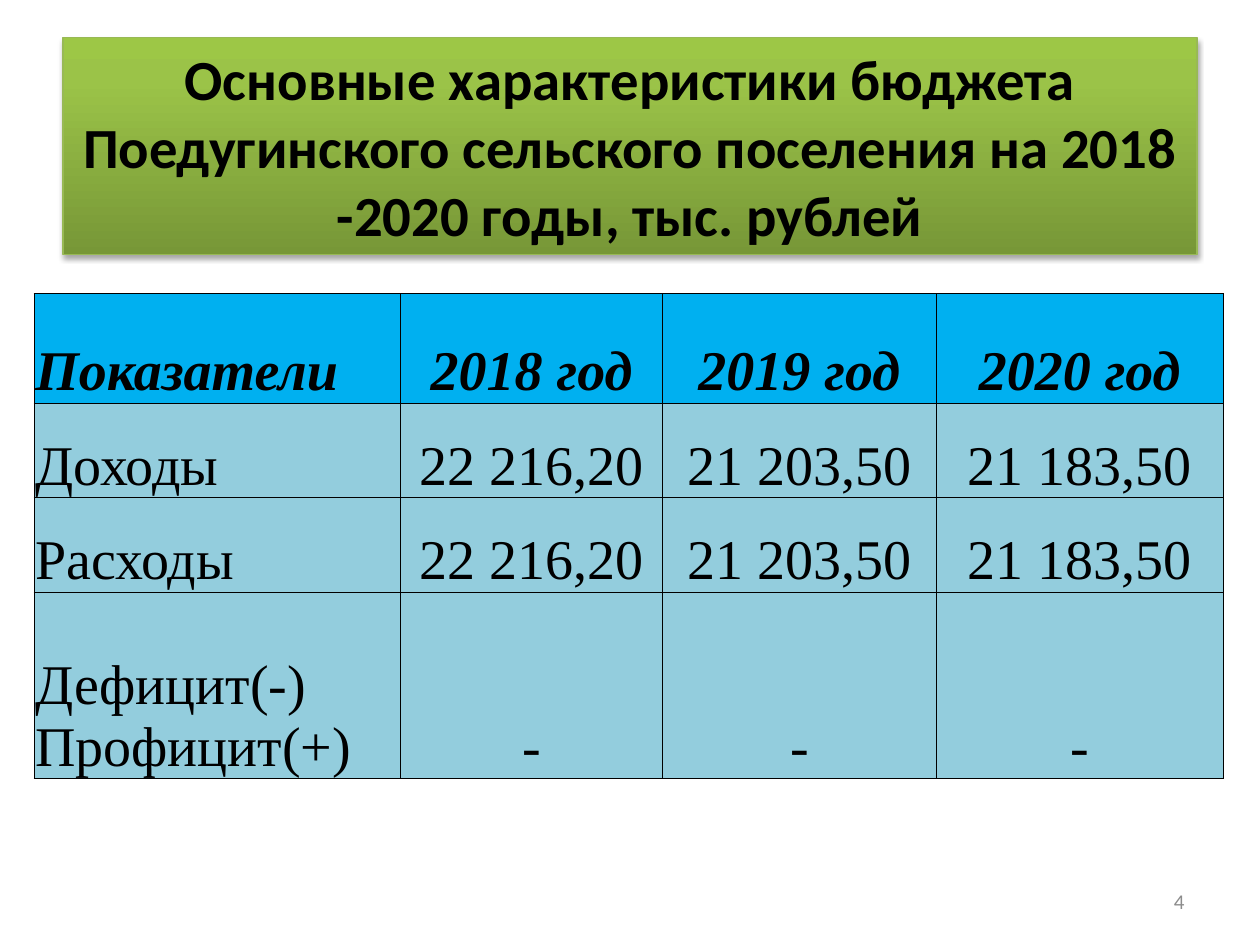
"""Build a slide with the main figures of a settlement budget for 2018-2020."""
from lxml import etree
from pptx import Presentation
from pptx.dml.color import RGBColor
from pptx.enum.text import MSO_ANCHOR, MSO_AUTO_SIZE, PP_ALIGN
from pptx.oxml import parse_xml
from pptx.oxml.ns import nsdecls, qn
from pptx.util import Inches, Pt

LEFT, CENTER, RIGHT = PP_ALIGN.LEFT, PP_ALIGN.CENTER, PP_ALIGN.RIGHT
MIDDLE, BOTTOM = MSO_ANCHOR.MIDDLE, MSO_ANCHOR.BOTTOM
NO_FIT = MSO_AUTO_SIZE.NONE
BLACK = RGBColor(0x00, 0x00, 0x00)
GRAY = RGBColor(0x8C, 0x8C, 0x8C)
HEADER_BLUE = RGBColor(0x00, 0xB0, 0xF0)
BODY_BLUE = RGBColor(0x93, 0xCD, 0xDD)
TITLE_LINE = RGBColor(0x98, 0xB9, 0x55)
TITLE_STOPS = [
    (0, RGBColor(0x77, 0x97, 0x37)),
    (80, RGBColor(0x9B, 0xC3, 0x48)),
    (100, RGBColor(0x9D, 0xC7, 0x46)),
]
MARGIN = 0.5
COLUMNS = [2.91, 2.08, 2.17, 2.28]
ROWS = [0.87, 0.75, 0.75, 1.48]
BUDGET = [
    ["Показатели", "2018 год", "2019 год", "2020 год"],
    ["Доходы", "22 216,20", "21 203,50", "21 183,50"],
    ["Расходы", "22 216,20", "21 203,50", "21 183,50"],
    ["Дефицит(-) Профицит(+)", "-", "-", "-"],
]


def write(frame, text, size, font="Calibri", color=BLACK, align=LEFT, bold=False, italic=False):
    para = frame.paragraphs[0]
    para.alignment = align
    span = para.add_run()
    span.text = text
    span.font.name = font
    span.font.size = Pt(size)
    span.font.color.rgb = color
    span.font.bold = bold
    span.font.italic = italic


deck = Presentation()
deck.slide_width, deck.slide_height = Inches(10), Inches(7.5)
page = deck.slides.add_slide(deck.slide_layouts[5])

title = page.shapes.title
title.left, title.top = Inches(MARGIN), Inches(0.3)
title.width, title.height = deck.slide_width - 2 * title.left, Inches(1.72)
title.fill.gradient()
title.fill.gradient_angle = 90
stop_list = title.element.spPr.find(".//" + qn("a:gsLst"))
for stop in list(stop_list):
    stop_list.remove(stop)
for position, color in TITLE_STOPS:
    stop = etree.SubElement(stop_list, qn("a:gs"), pos=str(position * 1000))
    etree.SubElement(stop, qn("a:srgbClr"), val=str(color))
title.line.color.rgb = TITLE_LINE
title.line.width = Pt(0.75)
title.shadow.inherit = False
title.element.spPr.find(qn("a:effectLst")).append(parse_xml(
    f'<a:outerShdw {nsdecls("a")} blurRad="{Pt(3.1)}" dist="{Pt(1.8)}" dir="5400000" rotWithShape="0">'
    '<a:srgbClr val="000000"><a:alpha val="35000"/></a:srgbClr></a:outerShdw>'
))
title.text_frame.auto_size = NO_FIT
title.text_frame.word_wrap = True
title.text_frame.vertical_anchor = MIDDLE
write(title.text_frame,
      "Основные характеристики бюджета Поедугинского сельского поселения на 2018 -2020 годы, тыс. рублей",
      32.4, align=CENTER, bold=True)

number = page.shapes.add_textbox(Inches(7.17), Inches(6.95), Inches(2.33), Inches(0.4))
number.text_frame.word_wrap = True
number.text_frame.vertical_anchor = MIDDLE
write(number.text_frame, "4", 12, color=GRAY, align=RIGHT)

table = page.shapes.add_table(
    len(ROWS), len(COLUMNS), Inches(0.27), Inches(2.33), Inches(sum(COLUMNS)), Inches(sum(ROWS))
).table
for column, width in zip(table.columns, COLUMNS):
    column.width = Inches(width)
for row, height in zip(table.rows, ROWS):
    row.height = Inches(height)
for row_index, values in enumerate(BUDGET):
    header = row_index == 0
    for column_index, value in enumerate(values):
        cell = table.cell(row_index, column_index)
        cell.margin_left = cell.margin_right = cell.margin_top = Inches(0.01)
        cell.margin_bottom = 0
        cell.vertical_anchor = BOTTOM
        for side in ("lnL", "lnR", "lnT", "lnB"):
            cell._tc.get_or_add_tcPr().append(parse_xml(
                f'<a:{side} {nsdecls("a")} w="{Pt(0.5)}"><a:solidFill>'
                f'<a:srgbClr val="{BLACK}"/></a:solidFill></a:{side}>'
            ))
        cell.fill.solid()
        cell.fill.fore_color.rgb = HEADER_BLUE if header else BODY_BLUE
        write(cell.text_frame, value, 32, font="Times New Roman",
              align=CENTER if column_index else LEFT, bold=header, italic=header)

deck.save("out.pptx")
